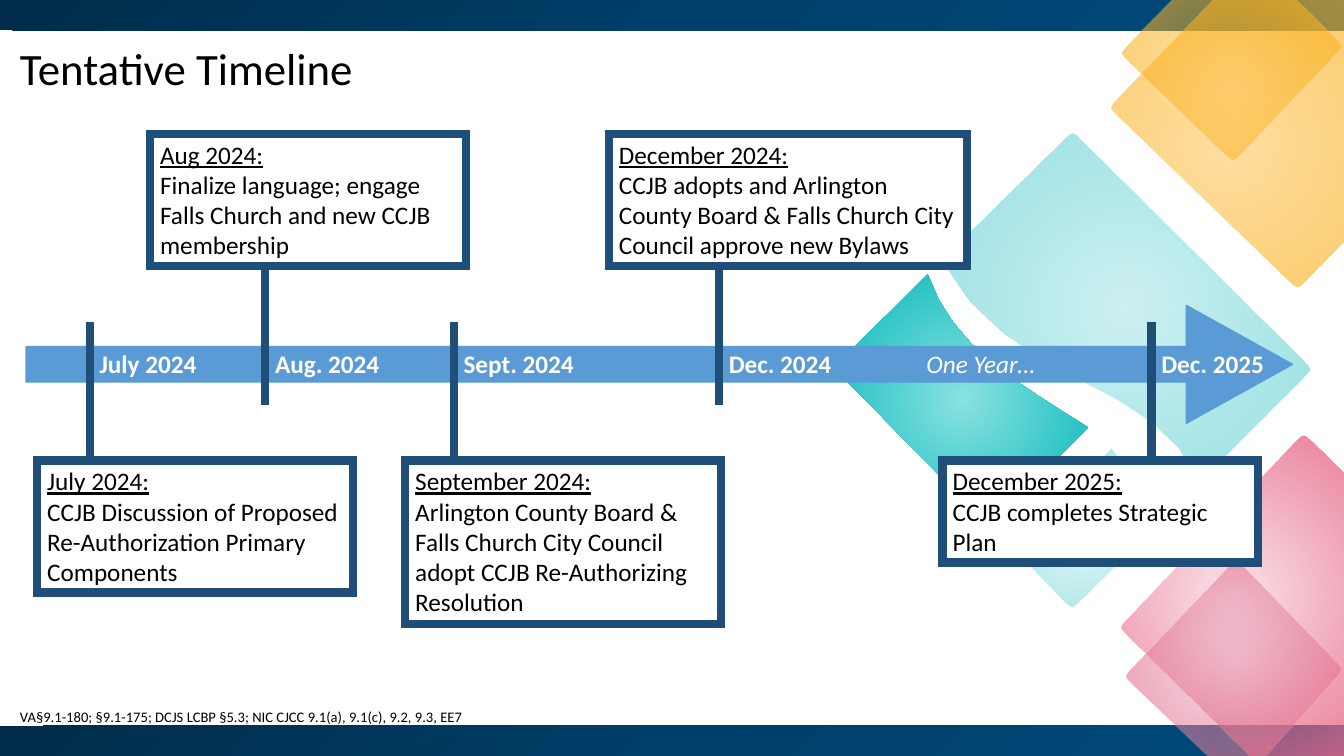
from pptx import Presentation
from pptx.dml.color import RGBColor
from pptx.enum.shapes import MSO_CONNECTOR, MSO_SHAPE
from pptx.enum.text import MSO_ANCHOR, PP_ALIGN
from pptx.oxml.ns import qn
from pptx.util import Inches, Pt
from lxml import etree
from math import dist

RECTANGLE = MSO_SHAPE.RECTANGLE
RIGHT_ARROW = MSO_SHAPE.RIGHT_ARROW
STRAIGHT = MSO_CONNECTOR.STRAIGHT
TOP = MSO_ANCHOR.TOP
LEFT = PP_ALIGN.LEFT

FONT = "Calibri"
COLORS = {
    "text": "000000", "white": "FFFFFF", "arrow": "5B9BD5", "marker": "1F4E79",
    "navy_dark": "002C49", "navy": "003F69", "navy_light": "004A7C",
    "yellow": "FCB322", "teal": "00B5B9", "aqua": "8AE2E1",
    "pink": "E86888", "mauve": "E39EB4",
}
BAND_STOPS = [(0, "navy_dark", 100), (50, "navy", 100), (100, "navy_light", 100)]
WIDTH, HEIGHT = 13.33, 7.5
CORNER_CUT = 0.13
CURVE_STEPS = 8

TILES = [
    (("yellow", 42), ("yellow", 66), [],
     [(12.03, 0), (WIDTH, 0), (WIDTH, 2.39), (12.86, 2.87), (11, 1.07)]),
    (("yellow", 34), ("yellow", 66), [],
     [(11.63, 0), (12.85, 0), (13.32, 0.46), (12.23, 1.61), (11.11, 0.53)]),
    (("teal", 10), ("teal", 35),
     [(11.02, 4.45), (11.17, 4.63), (11.35, 4.95), (11.43, 5.25)],
     [(10.63, 6.04), (10.04, 5.43)]),
    (("aqua", 100), ("teal", 100),
     [(9.2, 2.72), (9.45, 3.45), (10.1, 3.8), (10.79, 4.24)],
     [(9.81, 5.22), (8.27, 3.65)]),
    (("teal", 20), ("teal", 42),
     [(11.88, 4.79), (11.5, 3.75), (10, 3.85), (9.34, 2.58)],
     [(10.64, 1.3), (13.01, 3.66)]),
    (("pink", 18), ("pink", 84), [],
     [(12.92, 4.3), (WIDTH, 4.7), (WIDTH, HEIGHT), (12.4, HEIGHT), (11.1, 6.22)]),
    (("mauve", 37), ("pink", 72), [],
     [(12.26, 5.55), (13.32, 6.64), (12.55, HEIGHT), (11.98, HEIGHT), (11.15, 6.71)]),
]

EVENTS = [
    (0.63, "July 2024", False, (0.11, 3.13, 1.31), None, "July 2024:",
     "CCJB Discussion of Proposed Re-Authorization Primary Components"),
    (2.37, "Aug. 2024", True, (1.23, 3.13, 1.31), None, "Aug 2024:",
     "Finalize language; engage Falls Church and new CCJB membership"),
    (4.24, "Sept. 2024", False, (3.76, 3.13, 1.62), None, "September 2024:",
     "Arlington County Board & Falls Church City Council adopt CCJB Re-Authorizing Resolution"),
    (6.87, "Dec. 2024", True, (5.78, 3.55, 1.31), "white", "December 2024:",
     "CCJB adopts and Arlington County Board & Falls Church City Council approve new Bylaws"),
    (11.16, "Dec. 2025", False, (9.09, 3.13, 1.01), "white", "December 2025:",
     "CCJB completes Strategic Plan"),
]


def rgb(name):
    return RGBColor.from_string(COLORS[name])


def add_run(paragraph, text, size, color, bold=False, italic=False, underline=False):
    run = paragraph.add_run()
    run.text = text
    font = run.font
    font.name, font.size = FONT, Pt(size)
    font.bold, font.italic, font.underline = bold, italic, underline
    font.color.rgb = rgb(color)
    return run


def add_label(slide, left, top, width, height, text, size, color, **style):
    label = slide.shapes.add_textbox(*map(Inches, (left, top, width, height)))
    label.text_frame.word_wrap = True
    return add_run(label.text_frame.paragraphs[0], text, size, color, **style)


def fill_gradient(shape, stops, angle=None):
    shape.shadow.inherit = False
    shape.line.fill.background()
    shape.fill.solid()
    properties = shape.element.spPr
    gradient = etree.Element(qn("a:gradFill"), rotWithShape="1")
    stop_list = etree.SubElement(gradient, qn("a:gsLst"))
    for position, color, opacity in stops:
        stop = etree.SubElement(stop_list, qn("a:gs"), pos=str(position * 1000))
        tint = etree.SubElement(stop, qn("a:srgbClr"), val=COLORS[color])
        if opacity < 100:
            etree.SubElement(tint, qn("a:alpha"), val=str(opacity * 1000))
    if angle is None:
        circle = etree.SubElement(gradient, qn("a:path"), path="circle")
        etree.SubElement(circle, qn("a:fillToRect"), **dict.fromkeys("ltrb", "50000"))
    else:
        etree.SubElement(gradient, qn("a:lin"), ang=str(angle * 60000), scaled="0")
    properties.replace(properties.find(qn("a:solidFill")), gradient)


def bend(start, first, second, end):
    points = []
    for step in range(CURVE_STEPS + 1):
        t = step / CURVE_STEPS
        u = 1 - t
        points.append(tuple(
            u**3 * a + 3 * u * u * t * b + 3 * u * t * t * c + t**3 * d
            for a, b, c, d in zip(start, first, second, end)))
    return points


def toward(corner, neighbor):
    share = CORNER_CUT / dist(corner, neighbor)
    return tuple(a + (b - a) * share for a, b in zip(corner, neighbor))


def trace(curve, corners):
    points = bend(*curve) if curve else []
    ring = points + corners
    for index, corner in enumerate(corners, len(points)):
        if 0 < corner[0] < WIDTH and 0 < corner[1] < HEIGHT:
            before = toward(corner, ring[index - 1])
            after = toward(corner, ring[(index + 1) % len(ring)])
            points += bend(before, corner, corner, after)
        else:
            points.append(corner)
    return points


def draw_backdrop(slide, left, top, width, height):
    band_height = 0.3
    for band_top in (top, top + height - band_height):
        band = slide.shapes.add_shape(
            RECTANGLE, *map(Inches, (left, band_top, width, band_height)))
        fill_gradient(band, BAND_STOPS, 45)
    for center, edge, curve, corners in TILES:
        points = [(Inches(left + x), Inches(top + y)) for x, y in trace(curve, corners)]
        builder = slide.shapes.build_freeform(*points[0])
        builder.add_line_segments(points[1:], close=True)
        fill_gradient(builder.convert_to_shape(), [(0, *center), (100, *edge)])


def draw_card(slide, left, top, width, height, fill, heading, detail):
    card = slide.shapes.add_shape(RECTANGLE, *map(Inches, (left, top, width, height)))
    card.shadow.inherit = False
    if fill:
        card.fill.solid()
        card.fill.fore_color.rgb = rgb(fill)
    else:
        card.fill.background()
    card.line.color.rgb = rgb("marker")
    card.line.width = Pt(6)
    etree.SubElement(card.element.spPr.find(qn("a:ln")), qn("a:miter"), lim="800000")
    frame = card.text_frame
    frame.word_wrap = True
    frame.vertical_anchor = TOP
    for paragraph, text in ((frame.paragraphs[0], heading), (frame.add_paragraph(), detail)):
        paragraph.alignment = LEFT
        add_run(paragraph, text, 18, "text", underline=text == heading)


def draw_timeline(slide, left, top, width, height):
    arrow = slide.shapes.add_shape(RIGHT_ARROW, *map(Inches, (left, top, width, height)))
    arrow.adjustments[0], arrow.adjustments[1] = 0.3, 0.9
    arrow.shadow.inherit = False
    arrow.fill.solid()
    arrow.fill.fore_color.rgb = arrow.line.color.rgb = rgb("arrow")
    arrow.line.width = Pt(1)
    label_top = top + 0.38
    for offset, date, above, (card_left, card_width, card_height), fill, heading, detail in EVENTS:
        x = left + offset
        marker_top = top - 0.38 if above else top + 0.16
        card_top = top - 0.39 - card_height if above else top + 1.54
        marker = slide.shapes.add_connector(
            STRAIGHT, *map(Inches, (x, marker_top, x, marker_top + 1.37)))
        marker.line.color.rgb = rgb("marker")
        marker.line.width = Pt(6)
        etree.SubElement(marker.element.spPr, qn("a:effectLst"))
        add_label(slide, x, label_top, 1.37, 0.4, date, 18, "white", bold=True)
        draw_card(slide, left + card_left, card_top, card_width, card_height,
                  fill, heading, detail)
    add_label(slide, left + 8.83, label_top, 1.37, 0.4, "One Year…", 18, "white", italic=True)


def main():
    presentation = Presentation()
    presentation.slide_width, presentation.slide_height = Inches(WIDTH), Inches(HEIGHT)
    slide = presentation.slides.add_slide(presentation.slide_layouts[6])
    draw_backdrop(slide, 0, 0, WIDTH, HEIGHT)
    add_label(slide, 0.1, 0.36, 10.7, 0.64, "Tentative Timeline", 32, "text")
    citation = add_label(
        slide, 0.1, 6.94, 8.27, 0.4,
        "VA§9.1-180; §9.1-175; DCJS LCBP §5.3; NIC CJCC 9.1(a), 9.1(c), 9.2, 9.3, EE7",
        18, "text")
    citation.font._element.set("baseline", "30000")
    draw_timeline(slide, 0.26, 3.03, 12.56, 1.17)
    presentation.save("out.pptx")


if __name__ == "__main__":
    main()
